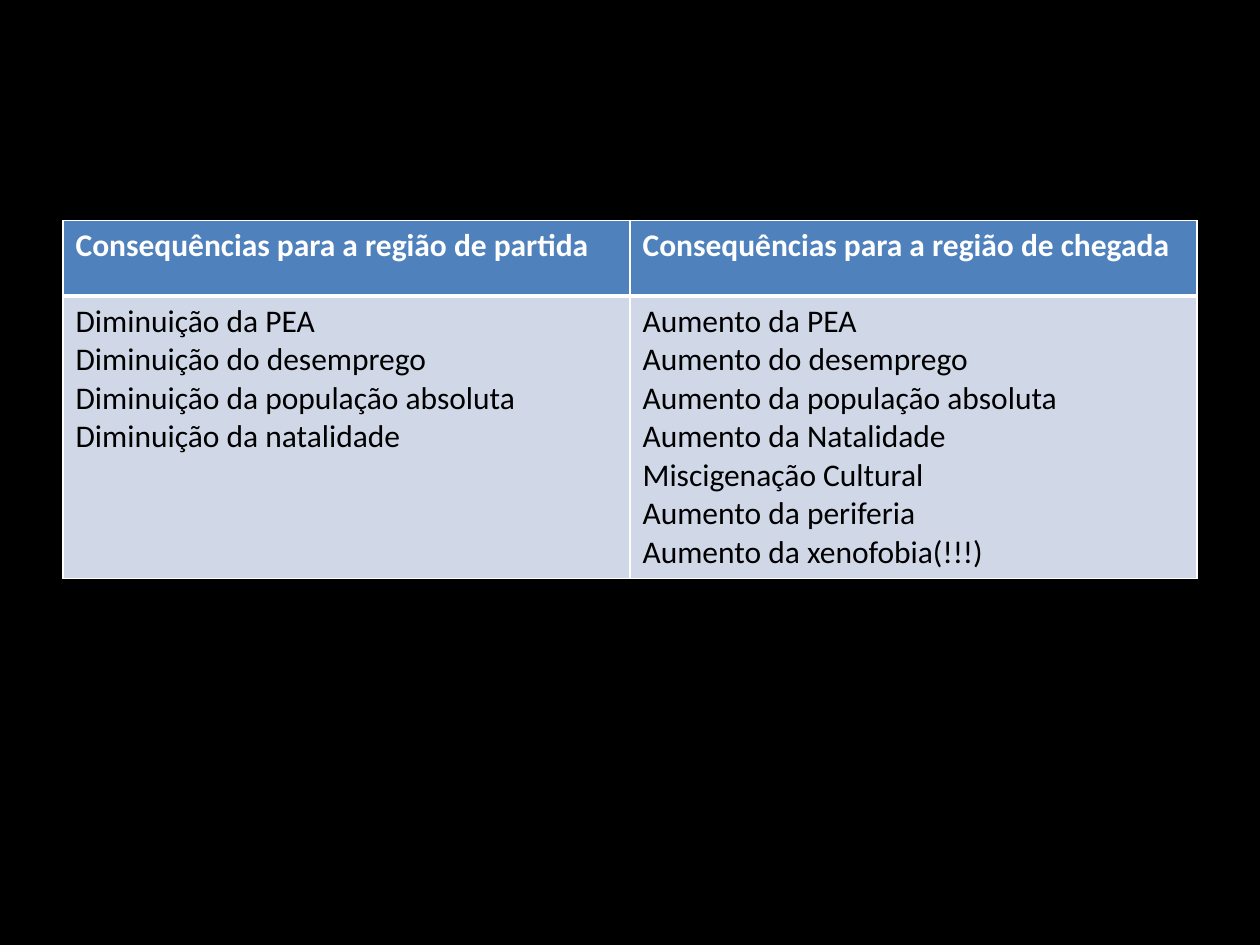
import pptx
import pptx.dml.color
import pptx.util
from lxml import etree
from pptx.oxml.ns import qn

Inches, Pt = pptx.util.Inches, pptx.util.Pt

# Content: one (heading, consequences) pair per column
COLUMNS = [
    ("Consequências para a região de partida", [
        "Diminuição da PEA",
        "Diminuição do desemprego",
        "Diminuição da população absoluta",
        "Diminuição da natalidade",
    ]),
    ("Consequências para a região de chegada", [
        "Aumento da PEA",
        "Aumento do desemprego",
        "Aumento da população absoluta",
        "Aumento da Natalidade",
        "Miscigenação Cultural",
        "Aumento da periferia",
        "Aumento da xenofobia(!!!)",
    ]),
]
LEFT, TOP, WIDTH = 0.5, 1.75, 9
ROW_HEIGHTS = [0.6, 2.24]
BLACK, WHITE, BLUE, PALE = "000000", "FFFFFF", "4F81BD", "D0D8E8"


def paint(fill, color):
    fill.solid()
    fill.fore_color.rgb = pptx.dml.color.RGBColor.from_string(color)


def add_borders(cell, widths):
    properties = cell._tc.get_or_add_tcPr()
    for side, width in widths.items():
        line = etree.SubElement(properties, qn(f"a:ln{side}"), w=str(Pt(width)))
        solid = etree.SubElement(line, qn("a:solidFill"))
        etree.SubElement(solid, qn("a:srgbClr"), val=WHITE)


def fill_cell(cell, lines, background, color, bold, borders):
    add_borders(cell, borders)
    paint(cell.fill, background)
    for index, line in enumerate(lines):
        frame = cell.text_frame
        para = frame.paragraphs[0] if index == 0 else frame.add_paragraph()
        span = para.add_run()
        span.text = line
        span.font.name = "Calibri"
        span.font.size = Pt(18)
        span.font.bold = bold
        paint(span.font.fill, color)


# Page
deck = pptx.Presentation()
deck.slide_width, deck.slide_height = Inches(10), Inches(7.5)
page = deck.slides.add_slide(deck.slide_layouts[6])
paint(page.background.fill, BLACK)

# Table
table = page.shapes.add_table(
    len(ROW_HEIGHTS), len(COLUMNS), Inches(LEFT), Inches(TOP),
    Inches(WIDTH), Inches(sum(ROW_HEIGHTS))).table
for row, height in zip(table.rows, ROW_HEIGHTS):
    row.height = Inches(height)

# Cells, with a thick rule between heading and body
for number, (heading, consequences) in enumerate(COLUMNS):
    table.columns[number].width = Inches(WIDTH / len(COLUMNS))
    fill_cell(table.cell(0, number), [heading], BLUE, WHITE, True,
              {"L": 1, "R": 1, "T": 1, "B": 3})
    fill_cell(table.cell(1, number), consequences, PALE, BLACK, False,
              {"L": 1, "R": 1, "T": 3, "B": 1})

deck.save("out.pptx")
